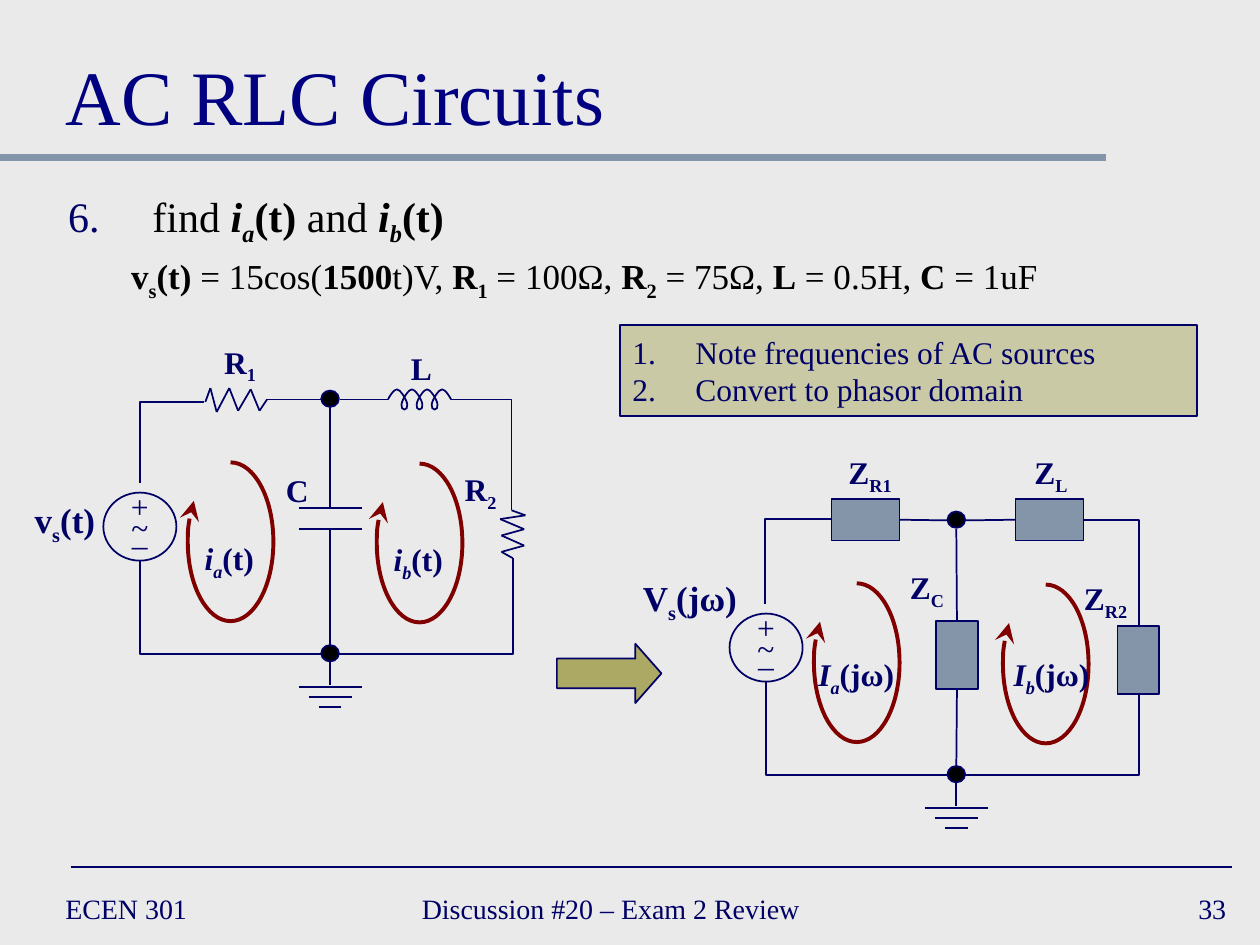
import math
from itertools import pairwise
from lxml import etree
from pptx import Presentation
from pptx import util as u
from pptx.dml.color import RGBColor
from pptx.enum import shapes, text
from pptx.oxml.ns import qn

NAVY, GRAY, OLIVE, RED, BLACK = "000066", "8495A9", "ACA964", "800000", "000000"
rgb = RGBColor.from_string


def add_runs(p, runs, size, color=NAVY):
    for words, style in runs:
        r = p.add_run()
        r.text = words
        f = r.font
        f.name, f.size, f.color.rgb = "Times New Roman", u.Pt(size), rgb(color)
        f.bold, f.italic = "b" in style, "i" in style
        if "s" in style:
            r._r.get_or_add_rPr().set("baseline", "-25000")


def add_line(x1, y1, x2, y2, color=NAVY, width=1, bent=False):
    kind = shapes.MSO_CONNECTOR.ELBOW if bent else shapes.MSO_CONNECTOR.STRAIGHT
    c = s.shapes.add_connector(kind, *map(u.Inches, (x1, y1, x2, y2)))
    c.line.color.rgb, c.line.width = rgb(color), u.Pt(width)
    spPr = c._element.spPr
    etree.SubElement(spPr, qn("a:effectLst"))
    if bent:
        spPr.find(qn("a:prstGeom")).set("prst", "bentConnector2")
    return c


prs = Presentation()
prs.slide_width, prs.slide_height = u.Inches(10), u.Inches(7.5)
s = prs.slides.add_slide(prs.slide_layouts[1])
s.background.fill.solid()
s.background.fill.fore_color.rgb = rgb("EAEAEA")
add_line(0, 1.25, 8.78, 1.25, GRAY, 4)
add_line(0.56, 6.88, 9.78, 6.88)

title, body = s.shapes.title, s.placeholders[1]
for sp, box, anchor in (
    (title, (0.42, 0.17, 9.17, 1), text.MSO_ANCHOR.BOTTOM),
    (body, (0.44, 1.46, 9.14, 1.12), text.MSO_ANCHOR.TOP),
):
    sp.left, sp.top, sp.width, sp.height = map(u.Inches, box)
    sp.text_frame.vertical_anchor = anchor
    sp.text_frame.auto_size = text.MSO_AUTO_SIZE.NONE
p = title.text_frame.paragraphs[0]
p.alignment = text.PP_ALIGN.LEFT
add_runs(p, [("AC RLC Circuits", "")], 44, "000080")

p = body.text_frame.paragraphs[0]
pPr = p._p.get_or_add_pPr()
pPr.set("marL", str(u.Inches(0.67)))
pPr.set("indent", str(u.Inches(-0.67)))
etree.SubElement(etree.SubElement(pPr, qn("a:buClr")), qn("a:srgbClr"), val=NAVY)
etree.SubElement(pPr, qn("a:buFont"), typeface="Times New Roman")
etree.SubElement(pPr, qn("a:buAutoNum"), type="arabicPeriod", startAt="6")
p.space_before = u.Pt(0)
add_runs(p, [("find ", ""), ("i", "bi"), ("a", "bis"), ("(t)", "b"), (" and ", ""),
             ("i", "bi"), ("b", "bis"), ("(t)", "b")], 24, BLACK)
p = body.text_frame.add_paragraph()
p.level = 1
pPr = p._p.get_or_add_pPr()
pPr.set("marL", str(u.Inches(1.08)))
pPr.set("indent", str(u.Inches(-0.58)))
etree.SubElement(pPr, qn("a:buNone"))
p.space_before = u.Pt(4)
add_runs(p, [("v", "b"), ("s", "bs"), ("(t) ", "b"), ("= 15cos(", ""), ("1500", "b"),
             ("t)V, ", ""), ("R", "b"), ("1", "bs"), (" = 100Ω, ", ""), ("R", "b"),
             ("2", "bs"), (" = 75Ω, ", ""), ("L", "b"), (" = 0.5H, ", ""),
             ("C ", "b"), ("= 1uF", "")], 20, BLACK)

rect, oval = shapes.MSO_SHAPE.RECTANGLE, shapes.MSO_SHAPE.OVAL
figures = [
    (rect, (4.92, 2.58, 4.58, 0.72), OLIVE),
    (rect, (6.6, 3.96, 0.54, 0.33), GRAY),
    (rect, (8.06, 3.96, 0.54, 0.33), GRAY),
    (rect, (7.43, 4.93, 0.33, 0.54), GRAY),
    (rect, (8.87, 4.97, 0.33, 0.54), GRAY),
    (shapes.MSO_SHAPE.RIGHT_ARROW, (4.42, 5.11, 0.83, 0.47), OLIVE),
]
coil = [(3.15 + 0.12 * t / math.tau + 0.04 * math.sin(t) - 0.01 * math.sin(2 * t),
         3.17 - 0.08 * math.cos(t),
         0.12 / math.tau + 0.04 * math.cos(t) - 0.02 * math.cos(2 * t),
         0.08 * math.sin(t), t) for t in map(math.radians, range(-90, 1171, 60))]
curves = [(coil, NAVY, 1)]
labels = []
for dx, dy in ((0, 0), (4.97, 0.96)):
    figures += [
        (oval, (2.55 + dx, 5.12 + dy, 0.14, 0.13), BLACK),
        (oval, (2.55 + dx, 3.1 + dy, 0.14, 0.13), BLACK),
        (oval, (0.82 + dx, 3.91 + dy, 0.58, 0.54), None),
    ]
    add_line(2.55 + dx, 5.19 + dy, 1.11 + dx, 4.45 + dy, bent=True)
    add_line(2.62 + dx, 5.44 + dy, 2.62 + dx, 5.19 + dy)
    for i, half in enumerate((0.25, 0.17, 0.09)):
        y = 5.45 + dy + 0.08 * i
        add_line(2.62 + dx - half, y, 2.62 + dx + half, y)
    for cx, cy in ((1.83 + dx, 4.3 + dy), (3.33 + dx, 4.31 + dy)):
        loop = [(cx + 0.34 * math.cos(t), cy + 0.63 * math.sin(t),
                 -0.34 * math.sin(t), 0.63 * math.cos(t), t)
                for t in map(math.radians, (-90, 0, 90, 180, 211))]
        curves.append((loop, RED, 2.25))
    labels += [
        (0.94 + dx, 3.82 + dy, 0.34, 0.7, 18, [[("+", "")], [("–", "")]]),
        (0.94 + dx, 3.98 + dy, 0.34, 0.4, 18, [[("~", "")]]),
    ]

for x1, y1, x2, y2 in (
    (1.62, 3.19, 1.11, 3.83), (3.58, 3.17, 4.06, 4.05), (2.69, 5.19, 4.07, 4.43),
    (6.6, 4.12, 6.07, 4.79), (8.6, 4.13, 9.04, 4.97), (7.66, 6.15, 9.04, 5.5),
):
    add_line(x1, y1, x2, y2, bent=True)
for zigzag in (
    [(1.63, 3.19), (1.67, 3.08), (1.72, 3.27), (1.82, 3.08), (1.89, 3.26),
     (1.99, 3.09), (2.06, 3.26), (2.12, 3.17)],
    [(4.06, 4.05), (4.17, 4.09), (3.97, 4.12), (4.16, 4.2), (3.98, 4.25),
     (4.16, 4.33), (3.98, 4.38), (4.07, 4.43)],
):
    for start, end in pairwise(zigzag):
        add_line(*start, *end)
for ends in (
    (2.55, 3.17, 2.12, 3.17), (2.7, 3.17, 3.08, 3.17), (2.62, 3.23, 2.62, 4.03),
    (2.62, 5.12, 2.62, 4.2), (2.37, 4.03, 2.87, 4.03), (2.37, 4.2, 2.87, 4.2),
):
    add_line(*ends)

drawn = []
for kind, box, fill in figures:
    sp = s.shapes.add_shape(kind, *map(u.Inches, box))
    sp.shadow.inherit = False
    if fill:
        sp.fill.solid()
        sp.fill.fore_color.rgb = rgb(fill)
    else:
        sp.fill.background()
    sp.line.color.rgb, sp.line.width = rgb(NAVY), u.Pt(1)
    drawn.append(sp)
note, zr1, zl, zc, zr2, arrow = drawn[:6]
arrow.adjustments[1] = 0.44

for ends, sp, site in (
    ((7.52, 4.13, 7.14, 4.13), zr1, 3), ((7.66, 4.13, 8.06, 4.13), zl, 1),
    ((7.59, 4.2, 7.59, 4.93), zc, 0), ((7.59, 6.08, 7.59, 5.47), zc, 2),
):
    add_line(*ends).end_connect(sp, site)

color = note._element.spPr.find(qn("a:solidFill")).find(qn("a:srgbClr"))
etree.SubElement(color, qn("a:alpha"), val="50000")
tf = note.text_frame
tf.word_wrap = True
for i, words in enumerate(("Note frequencies of AC sources", "Convert to phasor domain")):
    p = tf.add_paragraph() if i else tf.paragraphs[0]
    p.alignment = text.PP_ALIGN.LEFT
    pPr = p._p.get_or_add_pPr()
    pPr.set("marL", str(u.Inches(0.5)))
    pPr.set("indent", str(u.Inches(-0.5)))
    etree.SubElement(pPr, qn("a:buFont"), typeface="Times New Roman")
    etree.SubElement(pPr, qn("a:buAutoNum"), type="arabicPeriod")
    add_runs(p, [(words, "")], 18)

for knots, color, width in curves:
    fb = s.shapes.build_freeform(u.Inches(knots[0][0]), u.Inches(knots[0][1]))
    for (x1, y1, vx1, vy1, t1), (x2, y2, vx2, vy2, t2) in pairwise(knots):
        k = 4 / 3 * math.tan((t2 - t1) / 4)
        points = (x1 + k * vx1, y1 + k * vy1), (x2 - k * vx2, y2 - k * vy2), (x2, y2)
        fb.add_line_segments([(u.Inches(x), u.Inches(y)) for x, y in points], close=False)
    sp = fb.convert_to_shape()
    segments = list(sp._element.spPr.iter(qn("a:lnTo")))
    for a, b, c in zip(segments[::3], segments[1::3], segments[2::3]):
        bezier = etree.Element(qn("a:cubicBezTo"))
        a.addprevious(bezier)
        for segment in (a, b, c):
            bezier.append(segment[0])
            segment.getparent().remove(segment)
    sp.shadow.inherit = False
    sp.fill.background()
    sp.line.color.rgb, sp.line.width = rgb(color), u.Pt(width)
    if color == RED:
        etree.SubElement(sp.line._get_or_add_ln(), qn("a:tailEnd"),
                         type="stealth", w="lg", len="lg")

for x, y, w, size, name, sub, tail, style in (
    (1.61, 2.67, 0.53, 18, " R", "1", "", "b"), (3.58, 3.68, 0.47, 18, "R", "2", "", "b"),
    (3.16, 2.72, 0.37, 18, "L", "", "", "b"), (2.17, 3.69, 0.38, 18, "C", "", "", "b"),
    (0.17, 3.91, 0.69, 20, "v", "s", "(t)", "b"), (5, 4.53, 0.95, 20, "V", "s", "(jω)", "b"),
    (1.52, 4.23, 0.6, 18, "i", "a", "(t)", "bi"), (3.02, 4.24, 0.6, 18, "i", "b", "(t)", "bi"),
    (6.39, 5.15, 0.81, 18, "I", "a", "(jω)", "bi"), (7.94, 5.15, 0.81, 18, "I", "b", "(jω)", "bi"),
    (6.56, 3.55, 0.63, 18, " Z", "R1", "", "b"), (8.04, 3.55, 0.54, 18, " Z", "L", "", "b"),
    (7.05, 4.46, 0.55, 18, " Z", "C", "", "b"), (8.49, 4.55, 0.57, 18, "Z", "R2", "", "b"),
):
    runs = [(name, style), (sub, style + "s"), (tail, "b")]
    labels.append((x, y, w, 0.4, size, [[run for run in runs if run[0]]]))
for x, y, w, h, size, lines in labels:
    tf = s.shapes.add_textbox(*map(u.Inches, (x, y, w, h))).text_frame
    tf.word_wrap = False
    for i, runs in enumerate(lines):
        p = tf.add_paragraph() if i else tf.paragraphs[0]
        p.alignment = text.PP_ALIGN.CENTER
        add_runs(p, runs, size)

for x, w, words, align in (
    (0.42, 2.17, "ECEN 301", text.PP_ALIGN.LEFT),
    (3.25, 3.83, "Discussion #20 – Exam 2 Review", text.PP_ALIGN.LEFT),
    (7.75, 2.08, "33", text.PP_ALIGN.RIGHT),
):
    tf = s.shapes.add_textbox(*map(u.Inches, (x, 7, w, 0.42))).text_frame
    tf.word_wrap, tf.vertical_anchor = True, text.MSO_ANCHOR.MIDDLE
    tf.paragraphs[0].alignment = align
    add_runs(tf.paragraphs[0], [(words, "")], 16)

prs.save("out.pptx")
